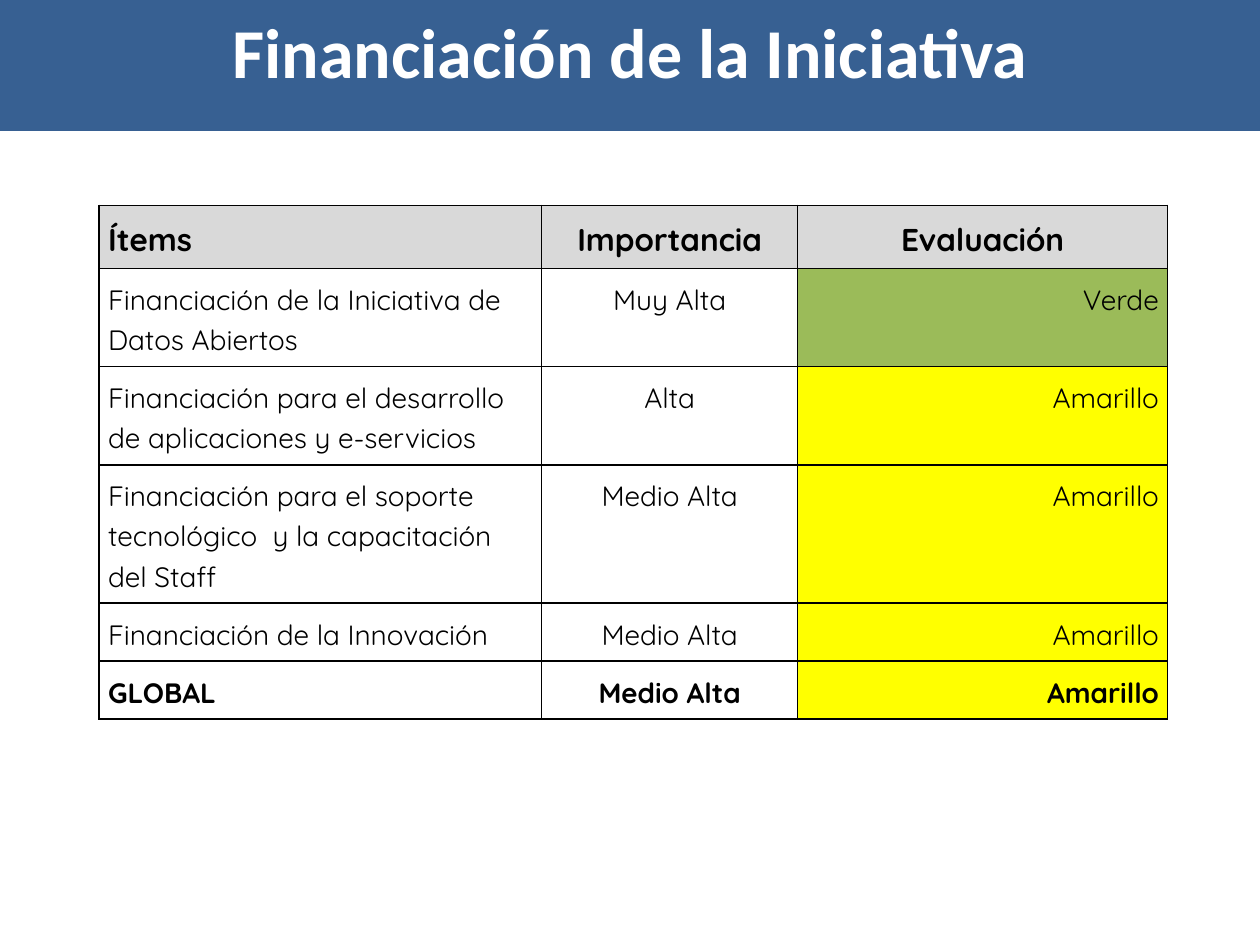
from lxml import etree
from pptx import Presentation
from pptx.dml.color import RGBColor
from pptx.enum.shapes import MSO_SHAPE
from pptx.enum.text import MSO_ANCHOR, PP_ALIGN
from pptx.oxml.ns import qn
from pptx.util import Cm, Pt

RECT = MSO_SHAPE.RECTANGLE
TOP = MSO_ANCHOR.TOP
LEFT, MID, RIGHT = PP_ALIGN.LEFT, PP_ALIGN.CENTER, PP_ALIGN.RIGHT

GREY, GREEN, YELLOW = "D9D9D9", "9BBB59", "FFFF00"
COLORS = {"Verde": GREEN, "Amarillo": YELLOW}
HEAD = ("Ítems", "Importancia", "Evaluación")
ITEMS = [
    ("Financiación de la Iniciativa de Datos Abiertos", "Muy Alta", "Verde"),
    ("Financiación para el desarrollo de aplicaciones y e-servicios",
     "Alta", "Amarillo"),
    ("Financiación para el soporte tecnológico  y la capacitación del Staff",
     "Medio Alta", "Amarillo"),
    ("Financiación de la Innovación", "Medio Alta", "Amarillo"),
]
TOTAL = ("GLOBAL", "Medio Alta", "Amarillo")


def rgb(code):
    return RGBColor.from_string(code)


class Deck:
    """Holds the style and the current slide."""
    title = "Calibri"
    body = "Quicksand"
    ink = "000000"
    pad = Cm(0.18)

    def __init__(self, show):
        self.slide = show.slides.add_slide(show.slide_layouts[6])

    def font(self, para, name, size, bold, color):
        font = para.font
        font.name, font.size, font.bold = name, Pt(size), bold
        font.color.rgb = rgb(color)

    def banner(self, text, width, height, fill):
        box = self.slide.shapes.add_shape(RECT, 0, 0, width, height)
        box.shadow.inherit = False
        box.fill.solid()
        box.fill.fore_color.rgb = rgb(fill)
        box.line.fill.background()
        frame = box.text_frame
        frame.word_wrap = True
        frame.vertical_anchor = TOP
        frame.margin_top = self.pad
        para = frame.paragraphs[0]
        para.text = text
        para.alignment = MID
        self.font(para, self.title, 40, True, "FFFFFF")

    def border(self, cell):
        """Draw a thin line on all four sides; call before filling."""
        props = cell._tc.get_or_add_tcPr()
        for side in ("lnL", "lnR", "lnT", "lnB"):
            line = etree.SubElement(props, qn("a:" + side), w=str(Pt(1)))
            fill = etree.SubElement(line, qn("a:solidFill"))
            etree.SubElement(fill, qn("a:srgbClr"), val=self.ink)

    def cell(self, cell, text, align, size, bold, fill):
        self.border(cell)
        cell.margin_left = cell.margin_right = self.pad
        cell.margin_top = cell.margin_bottom = self.pad
        if fill:
            cell.fill.solid()
            cell.fill.fore_color.rgb = rgb(fill)
        else:
            cell.fill.background()
        para = cell.text_frame.paragraphs[0]
        para.text = text
        para.alignment = align
        para.line_spacing = 1.15
        para.space_after = Pt(10)
        self.font(para, self.body, size, bold, self.ink)

    def table(self, left, top, widths, high):
        rows = [HEAD, *ITEMS, TOTAL]
        grid = self.slide.shapes.add_table(
            len(rows), len(widths), left, top, sum(widths),
            high * len(rows)).table
        grid.first_row = grid.horz_banding = False
        for col, width in zip(grid.columns, widths):
            col.width = width
        for r, row in enumerate(rows):
            grid.rows[r].height = high
            head = row is HEAD
            bold = head or row is TOTAL
            aligns = (LEFT, MID, MID if head else RIGHT)
            for c, (text, align) in enumerate(zip(row, aligns)):
                fill = GREY if head else COLORS.get(text)
                self.cell(grid.cell(r, c), text, align,
                          18 if head else 16, bold, fill)


def main():
    show = Presentation()
    show.slide_width, show.slide_height = Cm(25.4), Cm(19.05)
    deck = Deck(show)
    deck.table(Cm(2), Cm(4.14), (Cm(8.92), Cm(5.16), Cm(7.46)), Cm(1.04))
    deck.banner("Financiación de la Iniciativa", show.slide_width,
                Cm(2.64), "376092")
    show.save("out.pptx")


if __name__ == "__main__":
    main()
